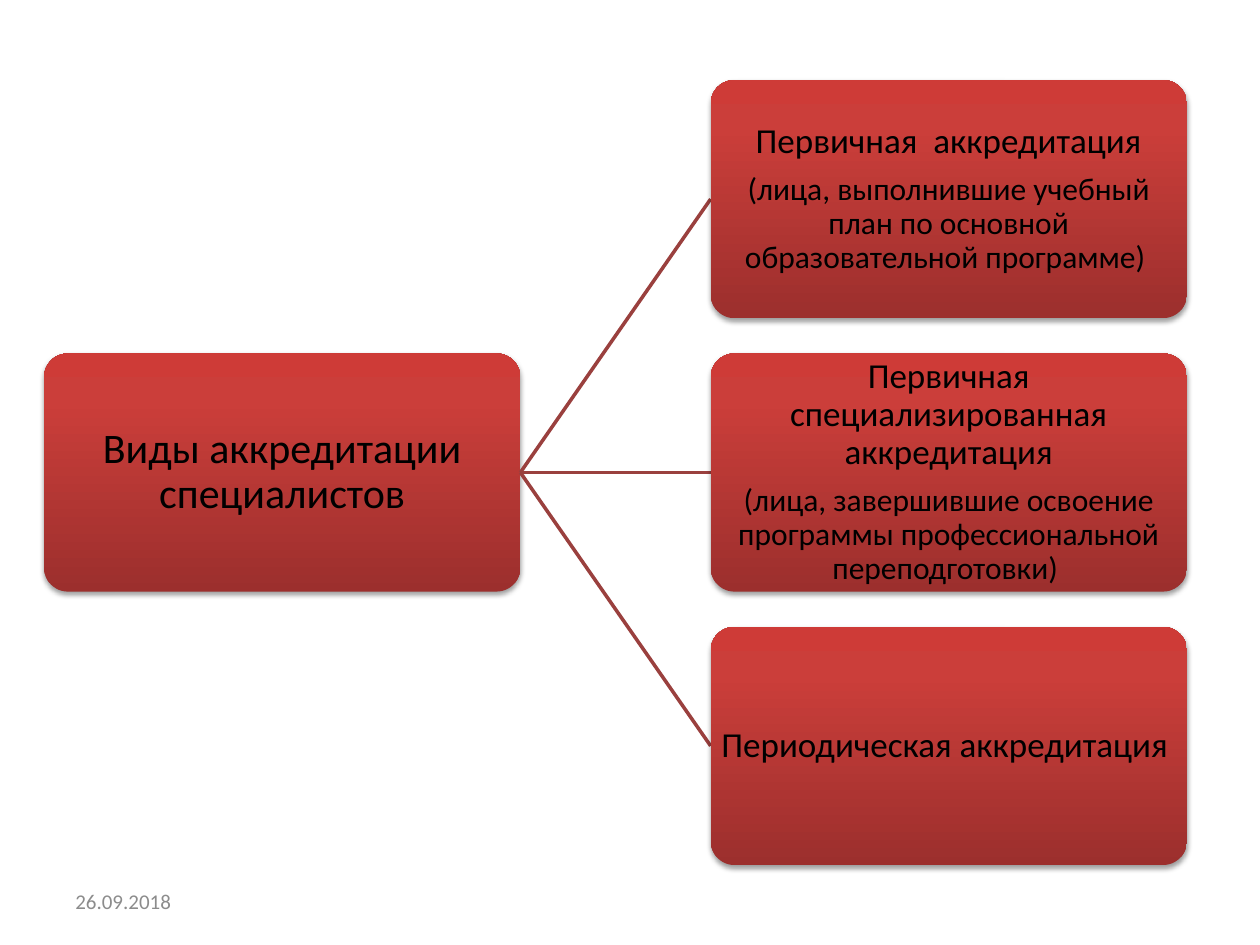
from lxml import etree
from pptx import Presentation
from pptx.dml.color import RGBColor
from pptx.enum.shapes import MSO_CONNECTOR, MSO_SHAPE
from pptx.enum.text import MSO_ANCHOR, PP_ALIGN
from pptx.oxml.ns import qn
from pptx.util import Inches, Pt

ROUNDED = MSO_SHAPE.ROUNDED_RECTANGLE
STRAIGHT = MSO_CONNECTOR.STRAIGHT
MIDDLE = MSO_ANCHOR.MIDDLE
CENTER = PP_ALIGN.CENTER

COLORS = {
    "text": "000000",
    "date": "8C8C8C",
    "line": "9A403E",
    "shadow": "000000",
    "bottom": "9C2F2D",
    "middle": "CB3E3A",
    "top": "CE3B37",
}
GRADIENT = [(0, "bottom"), (80, "middle"), (100, "top")]
FONT = "Calibri"

CARD_WIDTH, CARD_HEIGHT = 3.78, 1.89
ROOT_LEFT, BRANCH_LEFT = 0.35, 5.64
CENTER_Y, ROW_STEP = 3.75, 2.17

ROOT = [("Виды аккредитации специалистов", 24)]
BRANCHES = [
    [
        ("Первичная  аккредитация", 20),
        ("(лица, выполнившие учебный план по основной образовательной программе) ", 18),
    ],
    [
        ("Первичная специализированная аккредитация", 20),
        ("(лица, завершившие освоение программы профессиональной переподготовки) ", 18),
    ],
    [("Периодическая аккредитация ", 20)],
]


def add_color(parent, name):
    """Append an RGB colour element to an XML parent."""
    return etree.SubElement(parent, qn("a:srgbClr"), val=COLORS[name])


def add_span(para, text, size, color):
    """Add one formatted run to a paragraph."""
    span = para.add_run()
    span.text = text
    span.font.name = FONT
    span.font.size = Pt(size)
    span.font.color.rgb = RGBColor.from_string(COLORS[color])


def set_gradient(shape):
    """Fill a shape with the red vertical gradient."""
    shape.fill.gradient()
    shape.fill.gradient_angle = 90
    stops = shape.fill._xPr.find(".//" + qn("a:gsLst"))
    for stop in list(stops):
        stops.remove(stop)
    for position, name in GRADIENT:
        stop = etree.SubElement(stops, qn("a:gs"), pos=str(position * 1000))
        add_color(stop, name)


def set_shadow(shape):
    """Give a shape a soft shadow falling straight down."""
    shape.shadow.inherit = False
    effects = shape._element.spPr.find(qn("a:effectLst"))
    shadow = etree.SubElement(
        effects, qn("a:outerShdw"), blurRad=str(Pt(3.1)), dist=str(Pt(1.6)),
        dir="5400000", rotWithShape="0")
    etree.SubElement(add_color(shadow, "shadow"), qn("a:alpha"), val="38000")


def add_card(slide, left, center_y, paragraphs, inset):
    """Add a rounded card with centred paragraphs."""
    card = slide.shapes.add_shape(
        ROUNDED, Inches(left), Inches(center_y - CARD_HEIGHT / 2),
        Inches(CARD_WIDTH), Inches(CARD_HEIGHT))
    card.adjustments[0] = 0.1
    set_gradient(card)
    card.line.fill.background()
    set_shadow(card)
    frame = card.text_frame
    frame.word_wrap = True
    frame.vertical_anchor = MIDDLE
    frame.margin_left = frame.margin_right = Inches(inset)
    frame.margin_top = frame.margin_bottom = Inches(inset)
    for index, (text, size) in enumerate(paragraphs):
        para = frame.add_paragraph() if index else frame.paragraphs[0]
        para.alignment = CENTER
        para.line_spacing = 0.9
        para.space_after = Pt(size * 0.35)
        add_span(para, text, size, "text")


def add_link(slide, end_y):
    """Connect the root card to a branch card."""
    link = slide.shapes.add_connector(
        STRAIGHT, Inches(ROOT_LEFT + CARD_WIDTH), Inches(CENTER_Y),
        Inches(BRANCH_LEFT), Inches(end_y))
    link.line.color.rgb = RGBColor.from_string(COLORS["line"])
    link.line.width = Pt(2)
    etree.SubElement(link._element.spPr, qn("a:effectLst"))


def add_date(slide, text):
    """Add the date in the lower left corner."""
    box = slide.shapes.add_textbox(Inches(0.5), Inches(6.95), Inches(2.33), Inches(0.4))
    frame = box.text_frame
    frame.word_wrap = True
    frame.vertical_anchor = MIDDLE
    add_span(frame.paragraphs[0], text, 12, "date")


def main():
    """Build the accreditation hierarchy slide."""
    deck = Presentation()
    deck.slide_width, deck.slide_height = Inches(10), Inches(7.5)
    slide = deck.slides.add_slide(deck.slide_layouts[6])
    add_date(slide, "26.09.2018")
    add_card(slide, ROOT_LEFT, CENTER_Y, ROOT, 0.02)
    for row, paragraphs in enumerate(BRANCHES, start=-1):
        center_y = CENTER_Y + row * ROW_STEP
        add_link(slide, center_y)
        add_card(slide, BRANCH_LEFT, center_y, paragraphs, 0.01)
    deck.save("out.pptx")


if __name__ == "__main__":
    main()
